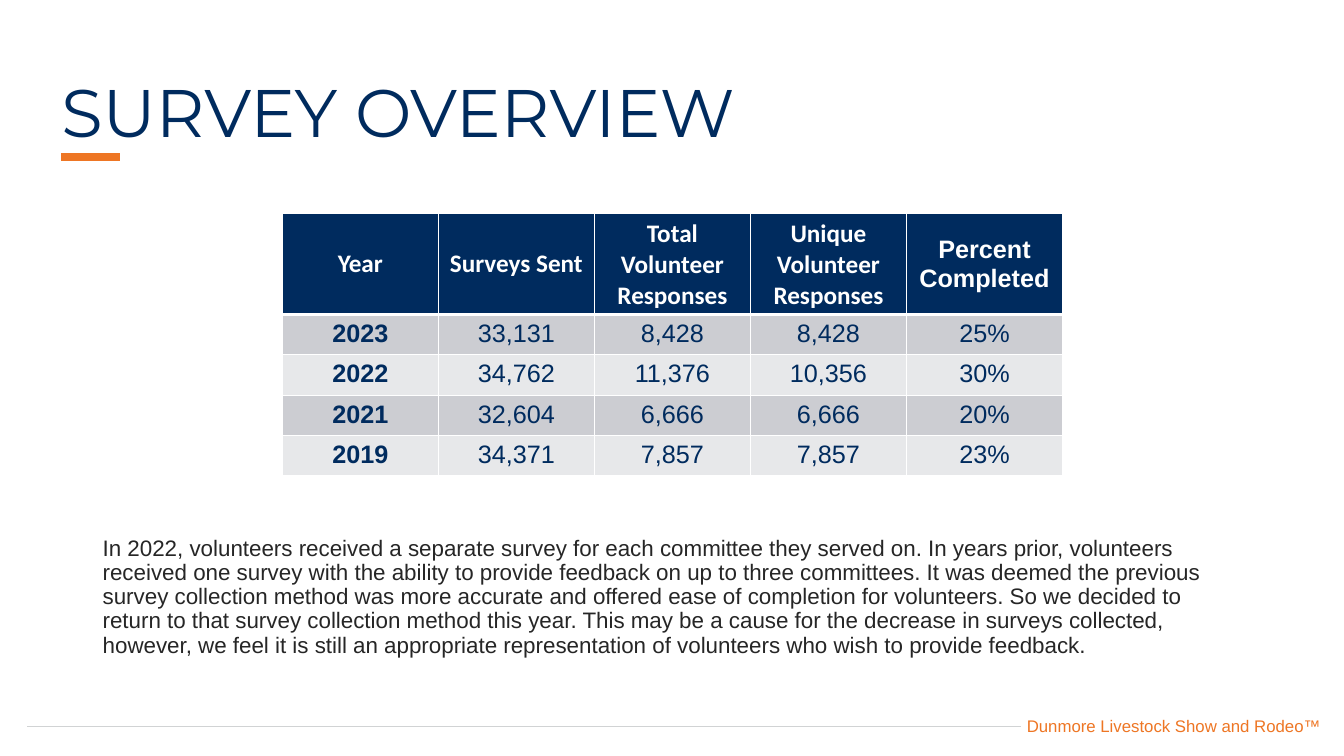
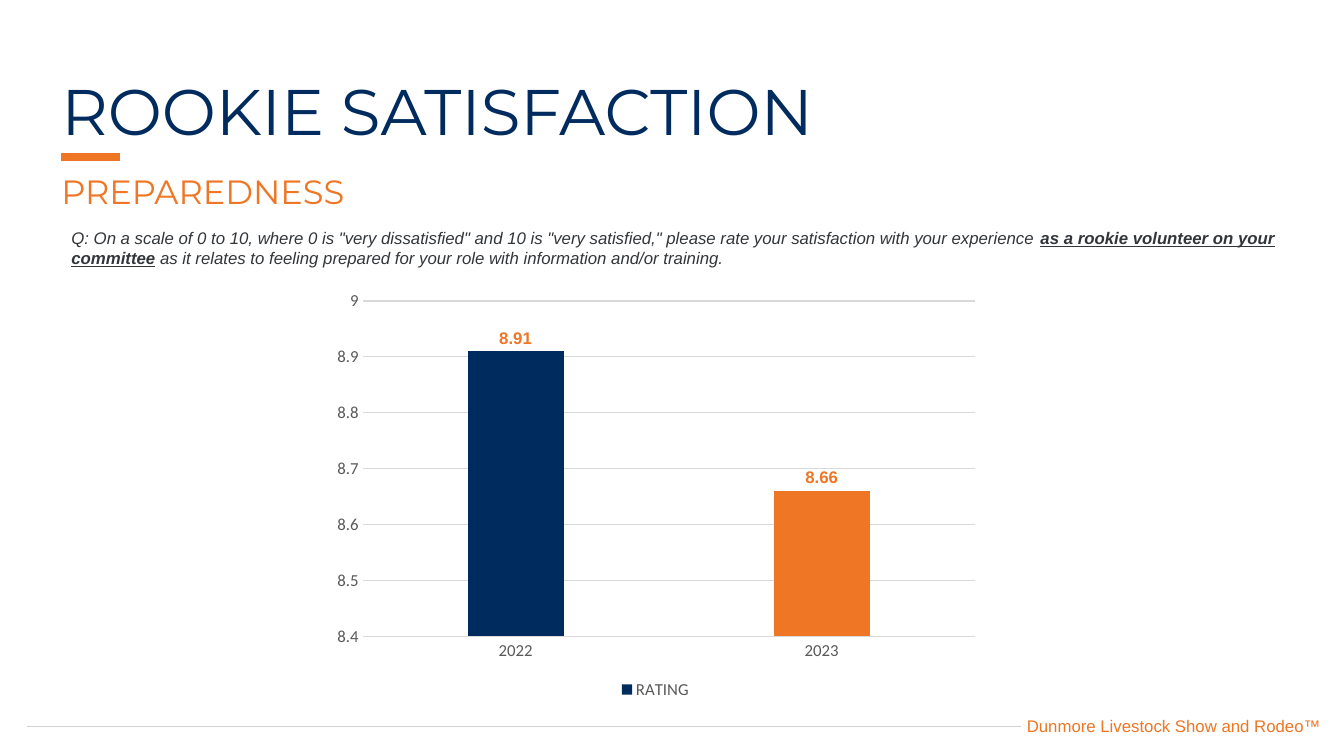
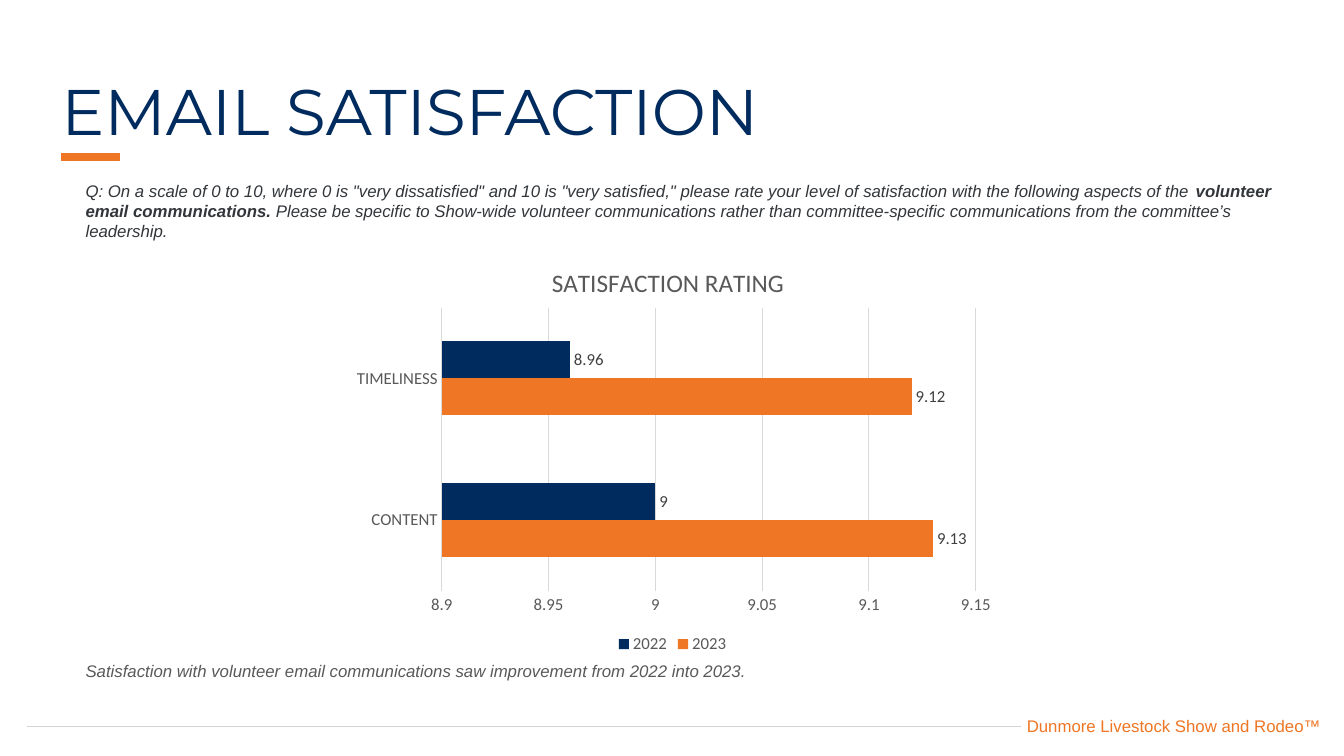
from dataclasses import dataclass
from typing import NamedTuple

from lxml import etree
from pptx import Presentation
from pptx.chart.axis import CategoryAxis, ValueAxis
from pptx.chart.chart import Chart
from pptx.chart.data import CategoryChartData
from pptx.dml.color import RGBColor
from pptx.enum.chart import XL_CHART_TYPE, XL_LABEL_POSITION, XL_LEGEND_POSITION, XL_TICK_MARK
from pptx.enum.text import MSO_ANCHOR, PP_ALIGN
from pptx.oxml.ns import qn
from pptx.slide import Slide
from pptx.table import _Cell
from pptx.text.text import Font
from pptx.util import Emu, Pt

EMU_PER_PX = 9144  # 100 px to the inch

NAVY = RGBColor(0x00, 0x2B, 0x5E)
ORANGE = RGBColor(0xEE, 0x76, 0x24)
WHITE = RGBColor(0xFF, 0xFF, 0xFF)
INK = RGBColor(0x26, 0x26, 0x26)
QUESTION_GREY = RGBColor(0x32, 0x36, 0x3A)
LABEL_GREY = RGBColor(0x40, 0x40, 0x40)
MID_GREY = RGBColor(0x59, 0x59, 0x59)
RULE_GREY = RGBColor(0xD1, 0xD3, 0xD4)
GRID_GREY = RGBColor(0xD9, 0xD9, 0xD9)
BAND_COLORS = (RGBColor(0xCC, 0xCD, 0xD2), RGBColor(0xE7, 0xE8, 0xEA))

ARIAL, CALIBRI, MONTSERRAT = "Arial", "Calibri", "Montserrat"
LEFT, CENTER, RIGHT = PP_ALIGN.LEFT, PP_ALIGN.CENTER, PP_ALIGN.RIGHT
MIDDLE = MSO_ANCHOR.MIDDLE
COLUMNS, BARS = XL_CHART_TYPE.COLUMN_CLUSTERED, XL_CHART_TYPE.BAR_CLUSTERED
OUTSIDE_END = XL_LABEL_POSITION.OUTSIDE_END
LEGEND_BOTTOM = XL_LEGEND_POSITION.BOTTOM
NO_TICK = XL_TICK_MARK.NONE

FOOTER = "Dunmore Livestock Show and Rodeo™"
SCALE_INTRO = ('Q: On a scale of 0 to 10, where 0 is "very dissatisfied" and 10 is '
               '"very satisfied," please rate your ')
OVERVIEW_NOTE = (
    "In 2022, volunteers received a separate survey for each committee they served on. "
    "In years prior, volunteers received one survey with the ability to provide feedback "
    "on up to three committees. It was deemed the previous survey collection method was "
    "more accurate and offered ease of completion for volunteers. So we decided "
    "to return to that survey collection method this year. This may be a cause for the "
    "decrease in surveys collected, however, we feel it is still an appropriate "
    "representation of volunteers who wish to provide feedback."
)
SURVEY_ROWS = (
    ("Year", "Surveys Sent", "Total Volunteer Responses", "Unique Volunteer Responses",
     "Percent Completed"),
    ("2023", "33,131", "8,428", "8,428", "25%"),
    ("2022", "34,762", "11,376", "10,356", "30%"),
    ("2021", "32,604", "6,666", "6,666", "20%"),
    ("2019", "34,371", "7,857", "7,857", "23%"),
)


class Area(NamedTuple):
    left: int
    top: int
    width: int
    height: int


class Fractions(NamedTuple):
    """Place inside a chart, as shares of its width and height."""
    x: float
    y: float
    w: float | None = None
    h: float | None = None


class Span(NamedTuple):
    text: str
    bold: bool = False
    underline: bool = False


@dataclass(frozen=True)
class TextStyle:
    size: int
    color: RGBColor
    name: str = ARIAL
    bold: bool = False
    italic: bool = False
    align: PP_ALIGN = LEFT
    display: bool = False  # tight lines with space before


@dataclass(frozen=True)
class Series:
    name: str
    values: tuple[float, ...]
    color: RGBColor


@dataclass(frozen=True)
class ChartPlan:
    kind: XL_CHART_TYPE
    area: Area
    categories: tuple[str, ...]
    series: tuple[Series, ...]
    gap: int
    overlap: int
    minimum: float
    maximum: float
    step: float
    plot: Fractions
    label_style: TextStyle


TITLE = TextStyle(46, NAVY, MONTSERRAT, display=True)
LARGE_TITLE = TextStyle(48, NAVY, MONTSERRAT, display=True)
SUBTITLE = TextStyle(24, ORANGE, MONTSERRAT, display=True)
BODY = TextStyle(16, INK, display=True)
QUESTION = TextStyle(12, QUESTION_GREY, italic=True)
REMARK = TextStyle(12, MID_GREY, italic=True)
FOOTER_STYLE = TextStyle(12, ORANGE, align=RIGHT)
AXIS_STYLE = TextStyle(12, MID_GREY, CALIBRI)
CHART_TITLE = TextStyle(18, MID_GREY, CALIBRI)

ROOKIE_CHART = ChartPlan(
    COLUMNS, Area(320, 282, 660, 416), ("2022", "2023"),
    (Series("RATING", (8.91, 8.66), NAVY),),
    gap=219, overlap=-27, minimum=8.4, maximum=9, step=0.1,
    plot=Fractions(0.06, 0.04, 0.92, 0.8),
    label_style=TextStyle(12, ORANGE, bold=True),
)
EMAIL_CHART = ChartPlan(
    BARS, Area(340, 234, 654, 419), ("CONTENT", "TIMELINESS"),
    (Series("2023", (9.13, 9.12), ORANGE), Series("2022", (9, 8.96), NAVY)),
    gap=182, overlap=0, minimum=8.9, maximum=9.15, step=0.05,
    plot=Fractions(0.15, 0.17, 0.81, 0.67),
    label_style=TextStyle(12, LABEL_GREY, CALIBRI),
)


def px(length: int) -> Emu:
    return Emu(length * EMU_PER_PX)


def scaled(area: Area) -> tuple[Emu, ...]:
    return tuple(px(length) for length in area)


def set_font(font: Font, style: TextStyle) -> None:
    font.name, font.size = style.name, Pt(style.size)
    font.bold, font.italic = style.bold, style.italic
    font.color.rgb = style.color


def add_text(slide: Slide, area: Area, style: TextStyle, *spans: Span) -> None:
    box = slide.shapes.add_textbox(*scaled(area))
    box.text_frame.word_wrap = True
    para = box.text_frame.paragraphs[0]
    para.alignment = style.align
    if style.display:
        para.line_spacing, para.space_before = 0.9, Pt(10)
    set_font(para.font, style)
    for span in spans:
        run = para.add_run()
        run.text = span.text
        if span.bold:
            run.font.bold = True
        if span.underline:
            run.font.underline = True


def add_rule(slide: Slide, left: int, right: int, y: int, color: RGBColor, weight: int) -> None:
    rule = slide.shapes.add_connector(1, px(left), px(y), px(right), px(y))
    rule.line.color.rgb, rule.line.width = color, Pt(weight)
    etree.SubElement(rule._element.spPr, qn("a:effectLst"))


def add_page(deck: Presentation, title: str, style: TextStyle = TITLE, width: int = 1323) -> Slide:
    """Add a slide with the shared footer, title and accent bar."""
    page = deck.slides.add_slide(deck.slide_layouts[6])
    add_text(page, Area(689, 705, 631, 30), FOOTER_STYLE, Span(FOOTER))
    add_rule(page, 27, 1013, 721, RULE_GREY, 1)
    add_text(page, Area(51, 74, width, 45), style, Span(title))
    add_rule(page, 61, 119, 156, ORANGE, 6)
    return page


def set_borders(cell: _Cell, top: int, bottom: int) -> None:
    properties = cell._tc.get_or_add_tcPr()
    for side, weight in (("L", 1), ("R", 1), ("T", top), ("B", bottom)):
        line = etree.SubElement(properties, qn(f"a:ln{side}"), w=str(Pt(weight)))
        fill = etree.SubElement(line, qn("a:solidFill"))
        etree.SubElement(fill, qn("a:srgbClr"), val=str(WHITE))


def add_survey_table(slide: Slide, area: Area, header_height: int) -> None:
    rows, columns = len(SURVEY_ROWS), len(SURVEY_ROWS[0])
    table = slide.shapes.add_table(rows, columns, *scaled(area)).table
    for column in table.columns:
        column.width = px(area.width) // columns
    for r, texts in enumerate(SURVEY_ROWS):
        header = r == 0
        body_height = (area.height - header_height) // (rows - 1)
        table.rows[r].height = px(header_height if header else body_height)
        for c, text in enumerate(texts):
            cell = table.cell(r, c)
            set_borders(cell, top=3 if r == 1 else 1, bottom=3 if header else 1)
            cell.fill.solid()
            cell.fill.fore_color.rgb = NAVY if header else BAND_COLORS[(r - 1) % 2]
            if header:
                cell.vertical_anchor = MIDDLE
            name = CALIBRI if header and c < columns - 1 else ARIAL
            para = cell.text_frame.paragraphs[0]
            para.text, para.alignment = text, CENTER
            set_font(para.font, TextStyle(18, WHITE if header else NAVY, name,
                                          bold=header or c == 0))


def place_part(part: etree._Element, place: Fractions, index: int) -> None:
    """Give a chart part a manual layout, as its child at index."""
    for old in part.findall(qn("c:layout")):
        part.remove(old)
    layout = etree.Element(qn("c:layout"))
    part.insert(index, layout)
    manual = etree.SubElement(layout, qn("c:manualLayout"))
    if place.w is not None:
        etree.SubElement(manual, qn("c:layoutTarget"), val="inner")
    for mode in ("xMode", "yMode"):
        etree.SubElement(manual, qn(f"c:{mode}"), val="edge")
    for key, share in place._asdict().items():
        if share is not None:
            etree.SubElement(manual, qn(f"c:{key}"), val=str(share))


def style_axis(axis: CategoryAxis | ValueAxis) -> None:
    axis.major_tick_mark = axis.minor_tick_mark = NO_TICK
    set_font(axis.tick_labels.font, AXIS_STYLE)


def add_rating_chart(slide: Slide, plan: ChartPlan) -> Chart:
    data = CategoryChartData()
    data.categories = plan.categories
    for series in plan.series:
        data.add_series(series.name, series.values)
    chart = slide.shapes.add_chart(plan.kind, *scaled(plan.area), data).chart
    chart.has_title = False
    set_font(chart.font, AXIS_STYLE)
    chart.has_legend = True
    chart.legend.position, chart.legend.include_in_layout = LEGEND_BOTTOM, False
    set_font(chart.legend.font, AXIS_STYLE)

    categories, values = chart.category_axis, chart.value_axis
    style_axis(categories)
    style_axis(values)
    categories.has_major_gridlines = False
    values.has_major_gridlines = True
    for line in (categories.format.line, values.major_gridlines.format.line):
        line.color.rgb, line.width = GRID_GREY, Pt(0.75)
    values.format.line.fill.background()
    values.minimum_scale, values.maximum_scale = plan.minimum, plan.maximum
    values.major_unit = plan.step

    plot = chart.plots[0]
    plot.vary_by_categories = False
    plot.gap_width, plot.overlap = plan.gap, plan.overlap
    for drawn, series in zip(plot.series, plan.series):
        drawn.format.fill.solid()
        drawn.format.fill.fore_color.rgb = series.color
        labels = drawn.data_labels
        labels.show_value, labels.position = True, OUTSIDE_END
        set_font(labels.font, plan.label_style)
    place_part(chart._chartSpace.chart.plotArea, plan.plot, 0)
    return chart


def add_overview(deck: Presentation) -> None:
    page = add_page(deck, "SURVEY OVERVIEW", LARGE_TITLE, 798)
    add_survey_table(page, Area(280, 212, 774, 260), header_height=100)
    add_text(page, Area(92, 528, 1150, 193), BODY, Span(OVERVIEW_NOTE))


def add_rookie_satisfaction(deck: Presentation) -> None:
    page = add_page(deck, "ROOKIE SATISFACTION")
    add_text(page, Area(51, 169, 1323, 45), SUBTITLE, Span("PREPAREDNESS"))
    add_text(
        page, Area(61, 221, 1236, 50), QUESTION,
        Span(SCALE_INTRO + "satisfaction with your experience "),
        Span("as a rookie volunteer on your committee", bold=True, underline=True),
        Span(" as it relates to feeling prepared for your role with information and/or training."),
    )
    chart = add_rating_chart(page, ROOKIE_CHART)
    latest = chart.plots[0].series[0].points[1].format.fill
    latest.solid()
    latest.fore_color.rgb = ORANGE


def add_email_satisfaction(deck: Presentation) -> None:
    page = add_page(deck, "EMAIL SATISFACTION")
    add_text(
        page, Area(75, 174, 1231, 71), QUESTION,
        Span(SCALE_INTRO + "level of satisfaction with the following aspects of the "),
        Span("volunteer email communications.", bold=True),
        Span(" Please be specific to Show-wide volunteer communications rather than "
             "committee-specific communications from the committee’s leadership."),
    )
    chart = add_rating_chart(page, EMAIL_CHART)
    chart.has_title = True
    para = chart.chart_title.text_frame.paragraphs[0]
    para.text = "SATISFACTION RATING"
    set_font(para.font, CHART_TITLE)
    place_part(chart.chart_title._element, Fractions(0.31, 0.06), 1)
    add_text(page, Area(75, 651, 1167, 30), REMARK,
             Span("Satisfaction with volunteer email communications saw improvement "
                  "from 2022 into 2023."))


def main() -> None:
    deck = Presentation()
    deck.slide_width, deck.slide_height = px(1333), px(750)
    add_overview(deck)
    add_rookie_satisfaction(deck)
    add_email_satisfaction(deck)
    deck.save("out.pptx")


if __name__ == "__main__":
    main()
